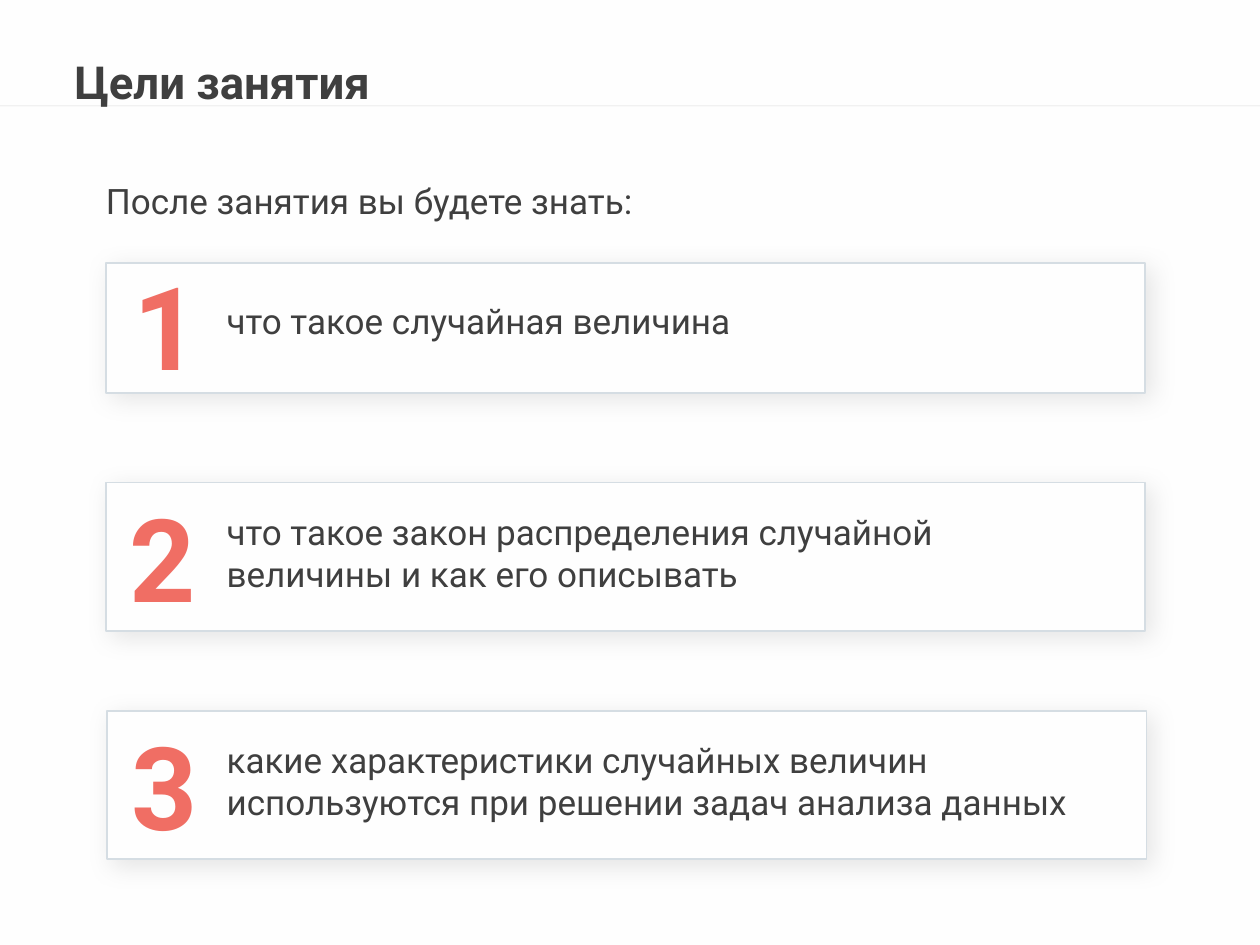
from dataclasses import dataclass

from lxml.etree import SubElement
from pptx import Presentation
from pptx.dml.color import RGBColor
from pptx.enum.shapes import MSO_CONNECTOR as Connector, MSO_SHAPE as Shape
from pptx.enum.text import MSO_ANCHOR as Anchor, PP_ALIGN as Align
from pptx.oxml import parse_xml
from pptx.oxml.ns import nsdecls, qn
from pptx.util import Inches, Pt


@dataclass(frozen=True)
class Theme:
    font: str = "Roboto"
    background: RGBColor = RGBColor.from_string("FEFEFE")
    header: RGBColor = RGBColor.from_string("FFFFFF")
    rule: RGBColor = RGBColor.from_string("7F7F7F")
    border: RGBColor = RGBColor.from_string("D5DDE3")
    text: RGBColor = RGBColor.from_string("3F3F3F")
    accent: RGBColor = RGBColor.from_string("F06E64")
    title_size: int = 26
    body_size: int = 20
    number_size: int = 66


theme = Theme()
presentation = Presentation()
presentation.slide_width, presentation.slide_height = Inches(10), Inches(7.5)
COLUMN = presentation.slide_width / 100
ROW = presentation.slide_height / 75
slide = presentation.slides.add_slide(presentation.slide_layouts[6])
slide.background.fill.solid()
slide.background.fill.fore_color.rgb = theme.background


def grid(left, top, width, height):
    """Turn grid columns and rows into slide lengths."""
    return [round(n * unit) for n, unit in zip((left, top, width, height), (COLUMN, ROW) * 2)]


def add_text(text, box, size, color=theme.text, bold=False, anchor=Anchor.MIDDLE, inset=(0, 0)):
    """Add a wrapped text box; inset is its side and top margin in grid units."""
    frame = slide.shapes.add_textbox(*grid(*box)).text_frame
    frame.word_wrap = True
    frame.vertical_anchor = anchor
    frame.margin_left = frame.margin_right = round(inset[0] * COLUMN)
    frame.margin_top = frame.margin_bottom = round(inset[1] * ROW)
    frame.text = text
    paragraph = frame.paragraphs[0]
    paragraph.alignment = Align.LEFT
    font = paragraph.runs[0].font
    font.name, font.size, font.bold = theme.font, Pt(size), bold
    font.color.rgb = color
    return paragraph


# Header band and the hairline under it
header = slide.shapes.add_shape(Shape.RECTANGLE, *grid(0, 0, 100, 8.4))
header.shadow.inherit = False
header.fill.solid()
header.fill.fore_color.rgb = theme.header
header.line.fill.background()

rule = slide.shapes.add_connector(Connector.STRAIGHT, *grid(0, 8.4, 100, 8.4))
rule.line.color.rgb = theme.rule
rule.line.width = Pt(0.75)
SubElement(rule._element.spPr, qn("a:effectLst"))

for shape, percent in ((header, 50), (rule, 10)):
    color = next(shape._element.spPr.iter(qn("a:srgbClr")))
    SubElement(color, qn("a:alpha"), val=str(percent * 1000))

title = add_text("Цели занятия", (5.9, 5.2, 72.4, 3.3), theme.title_size, bold=True)
title.line_spacing = 0.8
add_text("После занятия вы будете знать:", (8.4, 14.2, 82.5, 3.4), theme.body_size)

# Goal cards: text, card left, top and height, number left and top, text top and width
goals = [
    ("что такое случайная величина", 8.4, 20.9, 10.3, 10.6, 20.2, 23.3, 75.5),
    ("что такое закон распределения случайной величины и как его описывать",
     8.4, 38.3, 11.8, 10.3, 38.6, 40, 70.8),
    ("какие характеристики случайных величин используются при решении задач анализа данных",
     8.5, 56.4, 11.8, 10.4, 56.7, 58.1, 70.8),
]
for number, goal in enumerate(goals, start=1):
    text, left, top, height, number_left, number_top, text_top, text_width = goal
    card = slide.shapes.add_shape(Shape.RECTANGLE, *grid(left, top, 82.5, height))
    card.fill.solid()
    card.fill.fore_color.rgb = theme.background
    card.line.color.rgb = theme.border
    card.line.width = Pt(1)
    card._element.spPr.append(parse_xml(
        f'<a:effectLst {nsdecls("a")}><a:outerShdw blurRad="{Pt(15)}" dist="{Pt(3)}" '
        f'dir="{45 * 60000}" algn="tl" rotWithShape="0"><a:srgbClr val="000000">'
        '<a:alpha val="10000"/></a:srgbClr></a:outerShdw></a:effectLst>'))
    add_text(str(number), (number_left, number_top, 8.7, 11.1), theme.number_size,
             theme.accent, bold=True)
    add_text(text, (17, text_top, text_width, 11.1 if number > 1 else 9.4), theme.body_size,
             anchor=Anchor.TOP, inset=(1, 0.5))

presentation.save("out.pptx")
